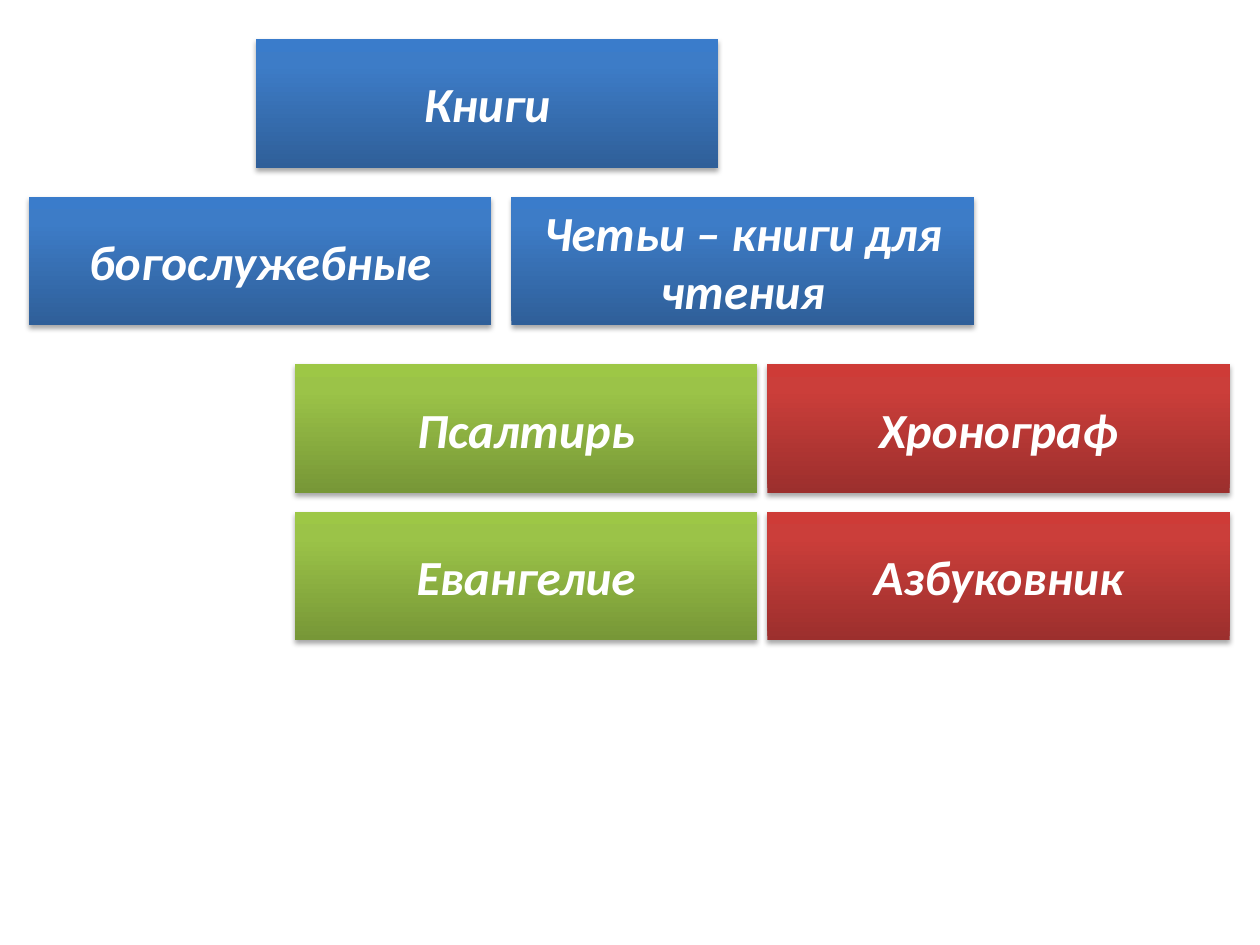
from copy import deepcopy

from lxml.etree import SubElement
from pptx import Presentation
from pptx.dml.color import RGBColor
from pptx.enum.shapes import MSO_SHAPE
from pptx.enum.text import MSO_ANCHOR, PP_ALIGN
from pptx.oxml.ns import qn
from pptx.util import Inches, Pt

WHITE = RGBColor(0xFF, 0xFF, 0xFF)
# Gradient colours from the bottom of a box to its top
BLUE = (RGBColor(0x2F, 0x5F, 0x99), RGBColor(0x3D, 0x7C, 0xC7), RGBColor(0x3A, 0x7C, 0xCB))
GREEN = (RGBColor(0x77, 0x97, 0x37), RGBColor(0x9B, 0xC3, 0x48), RGBColor(0x9D, 0xC7, 0x46))
RED = (RGBColor(0x9C, 0x2F, 0x2D), RGBColor(0xCB, 0x3E, 0x3A), RGBColor(0xCE, 0x3B, 0x37))
STOPS = (0, 0.8, 1)
FONT = {"name": "Calibri", "size": Pt(28), "bold": True, "italic": True}

BOX_WIDTH, BOX_HEIGHT = 3.67, 1.02
COLUMN_GAP, ROW_GAP = 0.16, 0.15


def fill_gradient(shape, colors):
    """Fill upwards through three colours."""
    shape.fill.gradient()
    shape.fill.gradient_angle = 90
    stop_list = shape._element.spPr.find(qn("a:gradFill")).find(qn("a:gsLst"))
    stop_list.append(deepcopy(stop_list[-1]))
    for stop, position, color in zip(shape.fill.gradient_stops, STOPS, colors):
        stop.position = position
        stop.color.rgb = color


def add_soft_shadow(shape):
    shape.shadow.inherit = False
    effects = shape._element.spPr.find(qn("a:effectLst"))
    shadow = SubElement(effects, qn("a:outerShdw"), blurRad=str(Pt(3.1)),
                        dist=str(Pt(1.8)), dir="5400000", rotWithShape="0")
    color = SubElement(shadow, qn("a:srgbClr"), val="000000")
    SubElement(color, qn("a:alpha"), val="35000")


def add_box(slide, left, top, text, colors):
    shape = slide.shapes.add_shape(MSO_SHAPE.RECTANGLE, Inches(left), Inches(top),
                                   Inches(BOX_WIDTH), Inches(BOX_HEIGHT))
    fill_gradient(shape, colors)
    shape.line.fill.background()
    add_soft_shadow(shape)
    frame = shape.text_frame
    frame.word_wrap = True
    frame.vertical_anchor = MSO_ANCHOR.MIDDLE
    paragraph = frame.paragraphs[0]
    paragraph.text = text
    paragraph.alignment = PP_ALIGN.CENTER
    for name, value in FONT.items():
        setattr(paragraph.font, name, value)
    paragraph.font.color.rgb = WHITE


def add_row(slide, left, top, texts, colors):
    """Place boxes side by side."""
    for column, text in enumerate(texts):
        add_box(slide, left + column * (BOX_WIDTH + COLUMN_GAP), top, text, colors)


def add_column(slide, left, top, texts, colors):
    """Stack boxes downwards."""
    for row, text in enumerate(texts):
        add_box(slide, left, top + row * (BOX_HEIGHT + ROW_GAP), text, colors)


def main():
    presentation = Presentation()
    presentation.slide_width, presentation.slide_height = Inches(10), Inches(7.5)
    slide = presentation.slides.add_slide(presentation.slide_layouts[6])

    # Heading and the two kinds of books
    add_row(slide, 2.03, 0.31, ["Книги"], BLUE)
    add_row(slide, 0.23, 1.56, ["богослужебные", "Четьи – книги для чтения"], BLUE)

    # Examples of books
    add_column(slide, 6.09, 2.89, ["Хронограф", "Азбуковник"], RED)
    add_column(slide, 2.34, 2.89, ["Псалтирь", "Евангелие"], GREEN)

    presentation.save("out.pptx")


if __name__ == "__main__":
    main()
